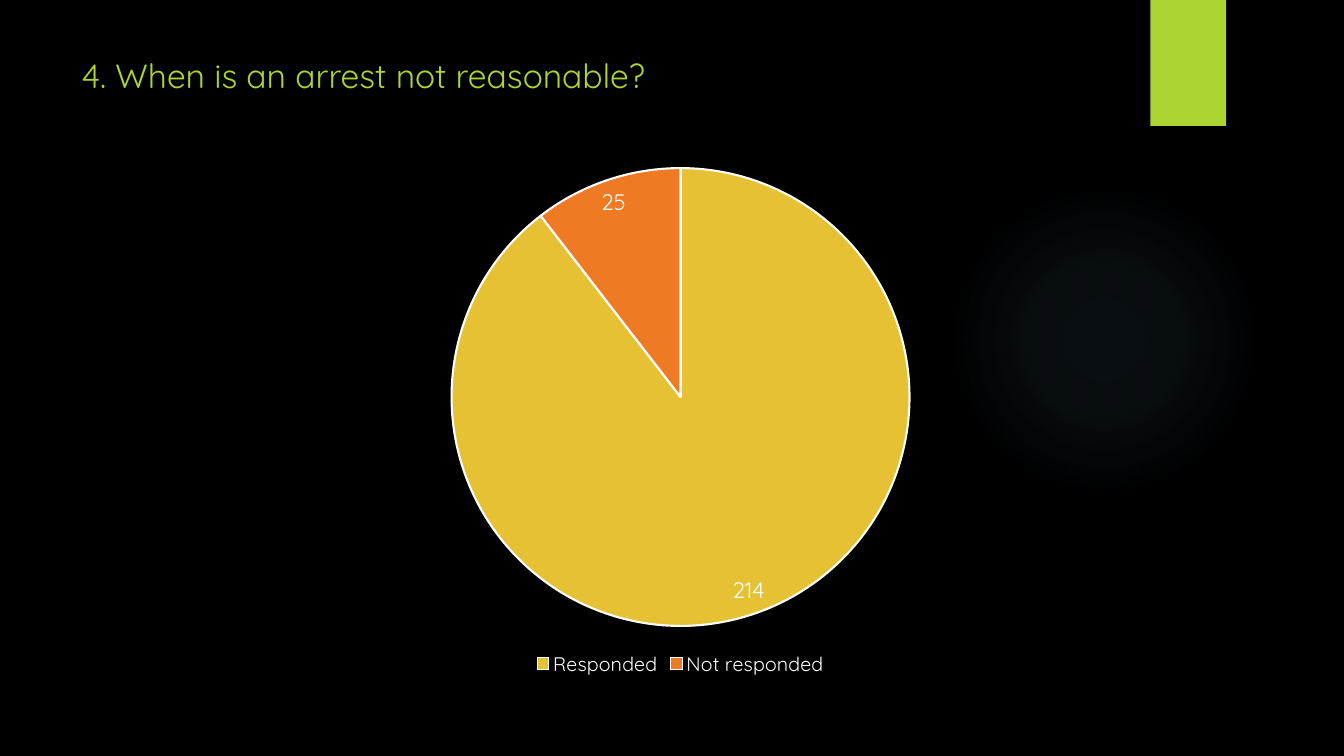
from lxml import etree
from pptx import Presentation
from pptx.chart.data import CategoryChartData
from pptx.dml.color import RGBColor
from pptx.enum.chart import XL_CHART_TYPE, XL_LABEL_POSITION, XL_LEGEND_POSITION
from pptx.enum.shapes import MSO_SHAPE
from pptx.enum.text import MSO_ANCHOR
from pptx.oxml import parse_xml
from pptx.oxml.ns import nsdecls
from pptx.util import Inches, Pt

PIE = XL_CHART_TYPE.PIE
LABEL_BEST_FIT = XL_LABEL_POSITION.BEST_FIT
LEGEND_BOTTOM = XL_LEGEND_POSITION.BOTTOM
RECTANGLE, OVAL = MSO_SHAPE.RECTANGLE, MSO_SHAPE.OVAL
ANCHOR_TOP = MSO_ANCHOR.TOP

BLACK = RGBColor(0x00, 0x00, 0x00)
WHITE = RGBColor(0xFF, 0xFF, 0xFF)
LIME = RGBColor(0xAC, 0xD4, 0x33)
GOLD = RGBColor(0xE6, 0xC1, 0x33)
ORANGE = RGBColor(0xEF, 0x7A, 0x24)
GLOW_BLUE = RGBColor(0x7A, 0xC4, 0xF0)

SLIDE_WIDTH, SLIDE_HEIGHT = Inches(13.33), Inches(7.5)
FONT = "Quicksand"
QUESTION = "4. When is an arrest not reasonable?"
# The question heads the data as a row without a count.
ANSWERS = [(QUESTION, None, LIME), ("Responded", 214, GOLD), ("Not responded", 25, ORANGE)]
GLOW_STOPS = [(0, 7), (36, 6), (69, 0)]  # position and opacity, in percent


def place(left, top, width, height):
    """Turn shares of the slide's size, in percent, into lengths."""
    return [int(share * side / 100) for share, side in (
        (left, SLIDE_WIDTH), (top, SLIDE_HEIGHT),
        (width, SLIDE_WIDTH), (height, SLIDE_HEIGHT))]


def style_font(font, size, color):
    for attribute, value in {"name": FONT, "size": Pt(size), "bold": False}.items():
        setattr(font, attribute, value)
    font.color.rgb = color


def add_plain_shape(slide, outline, area, color):
    shape = slide.shapes.add_shape(outline, *place(*area))
    shape.shadow.inherit = False
    shape.fill.solid()
    shape.fill.fore_color.rgb = color
    shape.line.fill.background()
    return shape


def add_glow(slide, area):
    """Add a circle that fades out from its centre."""
    glow = add_plain_shape(slide, OVAL, area, GLOW_BLUE)
    gradient = parse_xml(
        f'<a:gradFill {nsdecls("a")} rotWithShape="1"><a:gsLst/><a:path path="circle">'
        '<a:fillToRect l="50000" t="50000" r="50000" b="50000"/></a:path></a:gradFill>')
    for position, opacity in GLOW_STOPS:
        stop = parse_xml(
            f'<a:gs {nsdecls("a")} pos="{position * 1000}"><a:srgbClr val="{GLOW_BLUE}">'
            f'<a:alpha val="{opacity * 1000}"/></a:srgbClr></a:gs>')
        gradient[0].append(stop)
    properties = glow.fill._xPr
    properties.replace(properties.find("{*}solidFill"), gradient)
    etree.cleanup_namespaces(properties)


def add_title(slide, area):
    frame = slide.shapes.add_textbox(*place(*area)).text_frame
    frame.word_wrap = True
    frame.vertical_anchor = ANCHOR_TOP
    frame.text = QUESTION
    style_font(frame.paragraphs[0].font, 24, LIME)


def hide_legend_entry(legend, index):
    entry = parse_xml(f'<c:legendEntry {nsdecls("c")}><c:idx val="{index}"/>'
                      '<c:delete val="1"/></c:legendEntry>')
    legend._element.find("{*}legendPos").addnext(entry)


def add_answer_pie(slide, area):
    responses = CategoryChartData()
    responses.categories = [answer for answer, _, _ in ANSWERS]
    responses.add_series("Series 1", [count for _, count, _ in ANSWERS])
    chart = slide.shapes.add_chart(PIE, *place(*area), responses).chart
    chart.has_title = False
    style_font(chart.font, 10, WHITE)

    chart.has_legend = True
    chart.legend.position = LEGEND_BOTTOM
    chart.legend.include_in_layout = False
    style_font(chart.legend.font, 14, WHITE)

    plot = chart.plots[0]
    plot.vary_by_categories = True
    plot.has_data_labels = True
    labels = plot.data_labels
    for attribute, value in {"show_value": True, "show_percentage": False,
                             "position": LABEL_BEST_FIT}.items():
        setattr(labels, attribute, value)
    style_font(labels.font, 16, WHITE)

    for index, (_, count, color) in enumerate(ANSWERS):
        wedge = plot.series[0].points[index].format
        wedge.fill.solid()
        wedge.fill.fore_color.rgb = color
        wedge.line.color.rgb = WHITE
        wedge.line.width = Pt(1.5)
        if count is None:
            hide_legend_entry(chart.legend, index)


def main():
    presentation = Presentation()
    presentation.slide_width, presentation.slide_height = SLIDE_WIDTH, SLIDE_HEIGHT
    slide = presentation.slides.add_slide(presentation.slide_layouts[6])
    slide.background.fill.solid()
    slide.background.fill.fore_color.rgb = BLACK

    add_glow(slide, (70.59, 24.4, 23.1, 41.07))
    add_plain_shape(slide, RECTANGLE, (85.6, 0, 5.63, 16.67), LIME)
    add_title(slide, (5.33, 6.67, 77.2, 20.4))
    add_answer_pie(slide, (12.3, 20.4, 76.67, 69.6))
    presentation.save("out.pptx")


if __name__ == "__main__":
    main()
